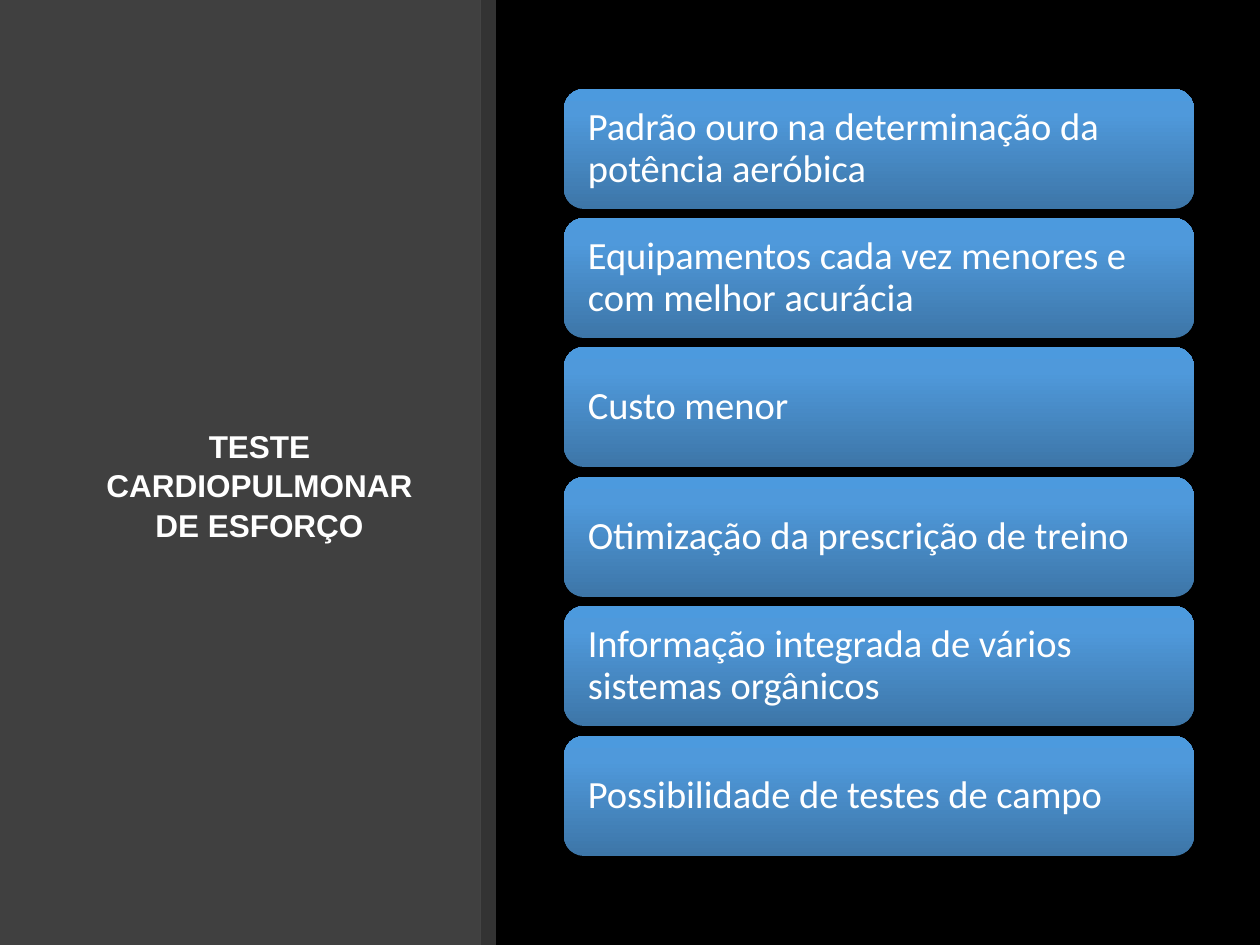
from copy import deepcopy
from lxml.etree import SubElement
from pptx import Presentation
from pptx.dml.color import RGBColor
from pptx.enum.shapes import MSO_SHAPE
from pptx.enum.text import MSO_ANCHOR, PP_ALIGN
from pptx.oxml.ns import qn
from pptx.util import Emu, Pt

SCALE = 914400 / 126
BLACK = RGBColor(0x00, 0x00, 0x00)
WHITE = RGBColor(0xFF, 0xFF, 0xFF)
GRAY = RGBColor(0x40, 0x40, 0x40)
STOPS = [
    (0, RGBColor(0x3D, 0x76, 0xA8)),
    (0.8, RGBColor(0x4F, 0x99, 0xDB)),
    (1, RGBColor(0x4C, 0x9A, 0xDE)),
]
ITEMS = [
    "Padrão ouro na determinação da potência aeróbica",
    "Equipamentos cada vez menores e com melhor acurácia",
    "Custo menor",
    "Otimização da prescrição de treino",
    "Informação integrada de vários sistemas orgânicos",
    "Possibilidade de testes de campo",
]
FIRST, LAST = 89, 736  # tops of the first and last box


def px(*nums):
    return [Emu(round(n * SCALE)) for n in nums]


def add_box(kind, *place):
    box = slide.shapes.add_shape(kind, *px(*place))
    box.shadow.inherit = False
    box.line.fill.background()
    return box


deck = Presentation()
deck.slide_width, deck.slide_height = px(1260, 945)
slide = deck.slides.add_slide(deck.slide_layouts[6])
slide.background.fill.solid()
slide.background.fill.fore_color.rgb = BLACK

# Left panel
panel = add_box(MSO_SHAPE.RECTANGLE, 0, 0, 481, 945)
panel.fill.solid()
panel.fill.fore_color.rgb = GRAY

# Title
title = slide.shapes.add_textbox(*px(87, 112, 345, 745))
frame = title.text_frame
frame.word_wrap = True
frame.vertical_anchor = MSO_ANCHOR.MIDDLE
para = frame.paragraphs[0]
para.alignment = PP_ALIGN.CENTER
para.line_spacing = 1.05
run = para.add_run()
run.text = "TESTE CARDIOPULMONAR DE ESFORÇO"
run.font.name = "Arial"
run.font.size = Pt(18)
run.font.bold = True
run.font.color.rgb = WHITE

# Translucent strip beside the panel
strip = add_box(MSO_SHAPE.RECTANGLE, 481, 0, 15, 945)
strip.fill.solid()
strip.fill.fore_color.rgb = WHITE
color = strip.fill._xPr.find(".//" + qn("a:srgbClr"))
SubElement(color, qn("a:alpha"), val="20000")

# Evenly spaced boxes
for i, text in enumerate(ITEMS):
    top = FIRST + (LAST - FIRST) * i // (len(ITEMS) - 1)
    box = add_box(MSO_SHAPE.ROUNDED_RECTANGLE, 564, top, 630, 120)
    box.fill.gradient()
    box.fill.gradient_angle = 90
    stops = box._element.spPr.find(".//" + qn("a:gsLst"))
    stops.append(deepcopy(stops[-1]))
    for stop, (pos, color) in zip(box.fill.gradient_stops, STOPS):
        stop.position = pos
        stop.color.rgb = color

    frame = box.text_frame
    frame.word_wrap = True
    frame.vertical_anchor = MSO_ANCHOR.MIDDLE
    frame.margin_left, frame.margin_right = px(18, 18)
    frame.margin_top, frame.margin_bottom = px(17, 17)
    para = frame.paragraphs[0]
    para.alignment = PP_ALIGN.LEFT
    para.line_spacing = 0.9
    run = para.add_run()
    run.text = text
    run.font.name = "Calibri"
    run.font.size = Pt(22)
    run.font.color.rgb = WHITE

deck.save("out.pptx")
